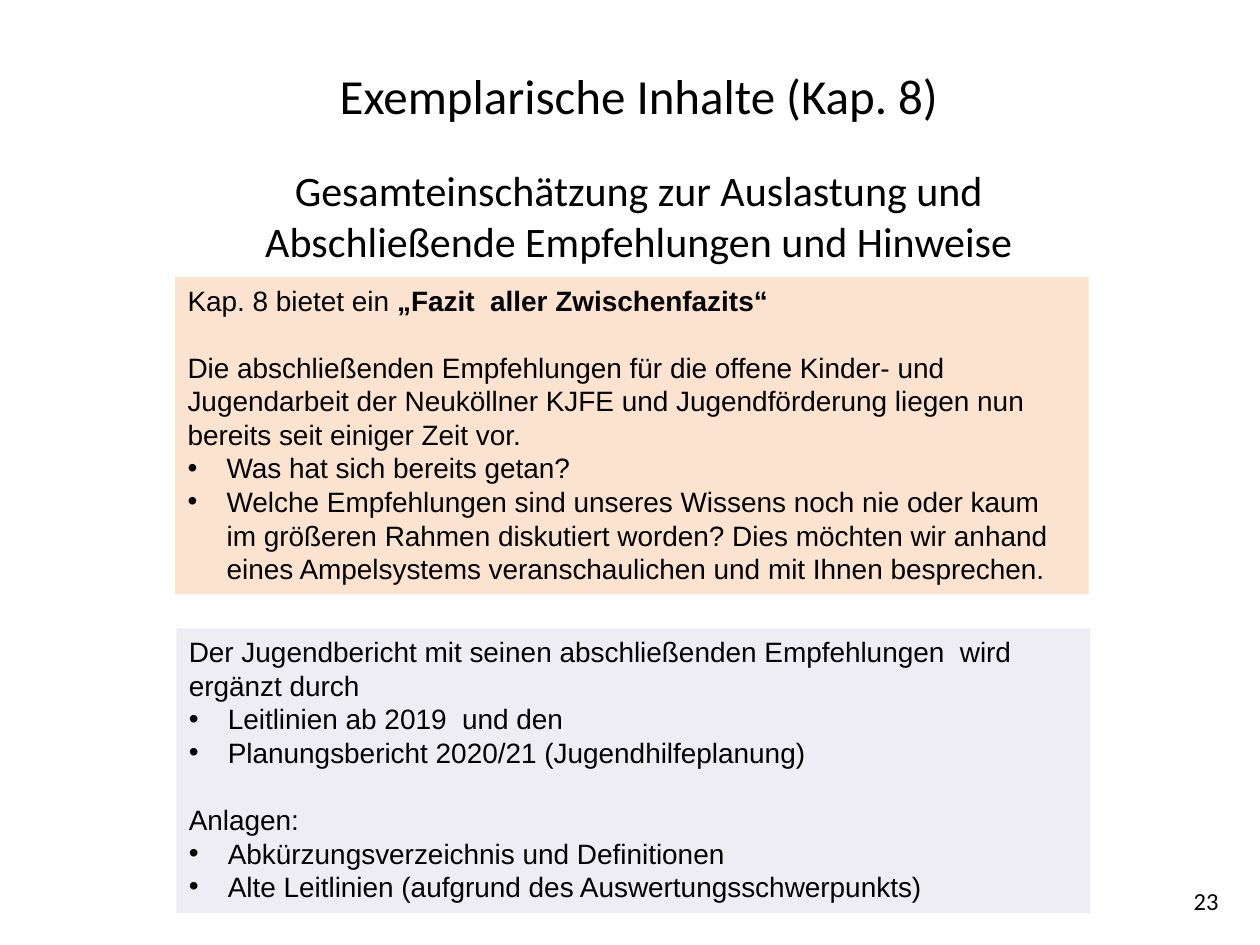
import pptx
import pptx.util
import pptx.dml.color
import pptx.enum.shapes
import pptx.enum.text
import pptx.oxml.ns
from lxml import etree

Pt, Inches = pptx.util.Pt, pptx.util.Inches
ALIGN = pptx.enum.text.PP_ALIGN
ANCHOR = pptx.enum.text.MSO_ANCHOR
AUTO_SIZE = pptx.enum.text.MSO_AUTO_SIZE
WIDTH, HEIGHT = 10, 7.5
BLANK_LINE = 19.2


def color(hex_text):
    return pptx.dml.color.RGBColor.from_string(hex_text)


def apply(target, values):
    for name, value in values.items():
        setattr(target, name, value)


def add_element(parent, tag, attribute, value):
    etree.SubElement(parent, pptx.oxml.ns.qn(tag)).set(attribute, value)


def add_bullet(paragraph):
    properties = paragraph._p.get_or_add_pPr()
    properties.set("marL", str(Inches(0.31)))
    properties.set("indent", str(-Inches(0.31)))
    add_element(properties, "a:buFont", "typeface", "Arial")
    add_element(properties, "a:buChar", "char", "•")


class SlideBuilder:
    ink = "000000"
    heading_font = "Calibri"
    body_font = "Arial"
    body_size = 16

    def __init__(self, deck):
        self.deck = deck
        self.slide = deck.slides.add_slide(deck.slide_layouts[5])

    def box(self, left, top, width, height):
        """Turn shares of the slide's size into lengths."""
        across, down = self.deck.slide_width, self.deck.slide_height
        return [round(part) for part in
                (left * across, top * down, width * across, height * down)]

    def add_text(self, paragraph, text, font, size, bold=False):
        run = paragraph.add_run()
        run.text = text
        apply(run.font, {"name": font, "size": Pt(size), "bold": bold})
        run.font.color.rgb = color(self.ink)

    def paragraphs(self, frame, count):
        return [frame.paragraphs[0]] + [frame.add_paragraph() for _ in range(count - 1)]

    def title(self, place, lines):
        """Lines are (text, size, space before)."""
        heading = self.slide.shapes.title
        apply(heading, dict(zip(("left", "top", "width", "height"), self.box(*place))))
        frame = heading.text_frame
        apply(frame, {"word_wrap": True, "auto_size": AUTO_SIZE.NONE,
                      "vertical_anchor": ANCHOR.TOP, "margin_top": Inches(0.08)})
        for paragraph, (text, size, gap) in zip(self.paragraphs(frame, len(lines)), lines):
            paragraph.alignment = ALIGN.CENTER
            if gap:
                paragraph.space_before = Pt(gap)
            self.add_text(paragraph, text, self.heading_font, size)

    def panel(self, place, fill, entries, opacity=None):
        """Entries are (kind, runs); kind is text, bullet or section."""
        panel = self.slide.shapes.add_shape(
            pptx.enum.shapes.MSO_SHAPE.RECTANGLE, *self.box(*place))
        panel.shadow.inherit = False
        panel.line.fill.background()
        panel.fill.solid()
        panel.fill.fore_color.rgb = color(fill)
        if opacity is not None:
            tone = panel._element.spPr.find(".//" + pptx.oxml.ns.qn("a:srgbClr"))
            add_element(tone, "a:alpha", "val", str(opacity * 1000))
        frame = panel.text_frame
        apply(frame, {"word_wrap": True, "vertical_anchor": ANCHOR.TOP})
        for paragraph, (kind, runs) in zip(self.paragraphs(frame, len(entries)), entries):
            paragraph.alignment = ALIGN.LEFT
            if kind == "section":
                paragraph.space_before = Pt(BLANK_LINE)
            if kind == "bullet":
                add_bullet(paragraph)
            for position, text in enumerate(runs):
                self.add_text(paragraph, text, self.body_font, self.body_size, position == 1)

    def page_number(self, place, number):
        frame = self.slide.shapes.add_textbox(*self.box(*place)).text_frame
        frame.word_wrap = True
        frame.paragraphs[0].alignment = ALIGN.RIGHT
        self.add_text(frame.paragraphs[0], number, self.heading_font, 14)


def main():
    deck = pptx.Presentation()
    apply(deck, {"slide_width": Inches(WIDTH), "slide_height": Inches(HEIGHT)})
    page = SlideBuilder(deck)
    page.title((0.058, 0.059, 0.898, 0.23), [
        ("Exemplarische Inhalte (Kap. 8)", 28, 0),
        ("Gesamteinschätzung zur Auslastung und", 24, 23),
        ("Abschließende Empfehlungen und Hinweise", 24, 0),
    ])
    page.panel((0.139, 0.293, 0.725, 0.336), "FCE3CF", [
        ("text", ["Kap. 8 bietet ein ", "„Fazit  aller Zwischenfazits“"]),
        ("section", ["Die abschließenden Empfehlungen für die offene Kinder- und "
                     "Jugendarbeit der Neuköllner KJFE und Jugendförderung liegen nun "
                     "bereits seit einiger Zeit vor."]),
        ("bullet", ["Was hat sich bereits getan?"]),
        ("bullet", ["Welche Empfehlungen sind unseres Wissens noch nie oder kaum im "
                    "größeren Rahmen diskutiert worden? Dies möchten wir anhand eines "
                    "Ampelsystems veranschaulichen und mit Ihnen besprechen."]),
    ])
    page.panel((0.14, 0.665, 0.725, 0.301), "D3D1E4", [
        ("text", ["Der Jugendbericht mit seinen abschließenden Empfehlungen  wird "
                  "ergänzt durch"]),
        ("bullet", ["Leitlinien ab 2019  und den"]),
        ("bullet", ["Planungsbericht 2020/21 (Jugendhilfeplanung)"]),
        ("section", ["Anlagen:"]),
        ("bullet", ["Abkürzungsverzeichnis und Definitionen"]),
        ("bullet", ["Alte Leitlinien (aufgrund des Auswertungsschwerpunkts)"]),
    ], opacity=38)
    page.page_number((0.744, 0.931, 0.233, 0.069), "23")
    deck.save("out.pptx")


if __name__ == "__main__":
    main()
